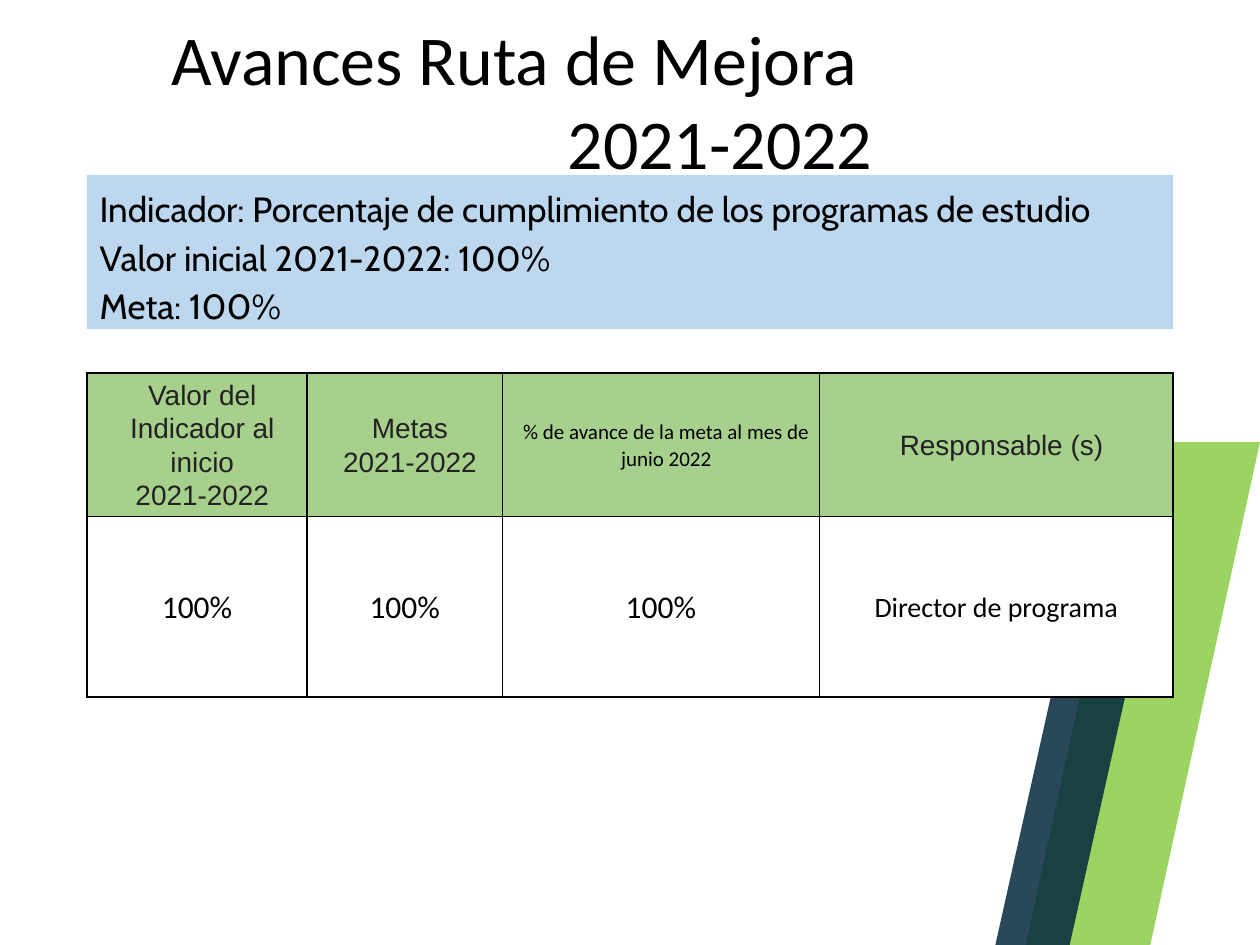
"""Build the slide on progress of the 2021-2022 improvement route."""

from dataclasses import dataclass

from lxml import etree
from pptx import Presentation
from pptx.dml.color import RGBColor
from pptx.enum.text import MSO_ANCHOR, MSO_AUTO_SIZE, PP_ALIGN
from pptx.oxml.ns import qn
from pptx.util import Pt

LEFT, CENTER, RIGHT = PP_ALIGN.LEFT, PP_ALIGN.CENTER, PP_ALIGN.RIGHT
TOP, MIDDLE = MSO_ANCHOR.TOP, MSO_ANCHOR.MIDDLE
NO_AUTOFIT = MSO_AUTO_SIZE.NONE


@dataclass(frozen=True)
class TextStyle:
    font: str
    size: float
    color: str


@dataclass(frozen=True)
class Theme:
    white: str = "FFFFFF"
    border: str = "000000"
    band: str = "BDD7EE"
    header: str = "A8D08D"
    lime: str = "92D050"
    navy: str = "00263B"
    title: TextStyle = TextStyle("Calibri", 40, "000000")
    indicator: TextStyle = TextStyle("Cabin", 20, "000000")
    heading: TextStyle = TextStyle("Arial", 16, "222222")
    small_heading: TextStyle = TextStyle("Calibri", 12, "000000")
    value: TextStyle = TextStyle("Calibri", 18, "000000")
    owner: TextStyle = TextStyle("Calibri", 16, "000000")


@dataclass(frozen=True)
class Box:
    left: float
    top: float
    width: float
    height: float


@dataclass(frozen=True)
class Stripe:
    top: float
    top_right: float
    bottom_left: float
    width: float
    color: str
    opacity: int


@dataclass(frozen=True)
class Entry:
    text: str
    style: TextStyle


THEME = Theme()
SLIDE = Box(0, 0, 720, 540)
TITLE = Box(90.72, 5.04, 511.92, 104.4)
INDICATOR = Box(49.68, 100.08, 620.64, 87.84)
TABLE = Box(49.68, 213.12, 620.64, 185.2)
COLUMN_WIDTHS = (125.8, 111.6, 181.2, 202.04)
ROW_HEIGHTS = (82.2, 103)
CELL_SPACING = 1.07
HEADER_INDENT = 6

STRIPES = (
    Stripe(252.72, 720, 586.08, 71.28, THEME.lime, 90),
    Stripe(385.2, 645.84, 568.8, 42.48, THEME.navy, 84),
)
ROWS = (
    (
        Entry("Valor del Indicador al inicio\n2021-2022", THEME.heading),
        Entry("Metas\n2021-2022", THEME.heading),
        Entry("% de avance de la meta al mes de junio 2022", THEME.small_heading),
        Entry("Responsable (s)", THEME.heading),
    ),
    (
        Entry("100%", THEME.value),
        Entry("100%", THEME.value),
        Entry("100%", THEME.value),
        Entry("Director de programa", THEME.owner),
    ),
)


def paint(fill, color: str) -> None:
    """Apply a solid colour to a fill."""
    fill.solid()
    fill.fore_color.rgb = RGBColor.from_string(color)


def write(frame, text: str, style: TextStyle, align, spacing: float, indent: float = 0) -> None:
    """Write paragraphs in one style, without bullets."""
    frame.text = text
    for paragraph in frame.paragraphs:
        properties = paragraph._p.get_or_add_pPr()
        properties.set("marL", str(Pt(indent)))
        properties.set("indent", "0")
        etree.SubElement(properties, qn("a:buNone"))
        paragraph.alignment = align
        paragraph.line_spacing = spacing
        paragraph.space_before = Pt(0)
        for run in paragraph.runs:
            run.font.name = style.font
            run.font.size = Pt(style.size)
            run.font.color.rgb = RGBColor.from_string(style.color)


def fill_placeholder(holder, box: Box, color: str, text: str, style: TextStyle, spacing: float) -> None:
    """Place, colour and write a placeholder."""
    holder.left, holder.top = Pt(box.left), Pt(box.top)
    holder.width, holder.height = Pt(box.width), Pt(box.height)
    paint(holder.fill, color)
    frame = holder.text_frame
    frame.word_wrap = True
    frame.auto_size = NO_AUTOFIT
    frame.vertical_anchor = TOP
    write(frame, text, style, LEFT, spacing)


def draw_stripe(slide, stripe: Stripe) -> None:
    """Draw a slanted translucent stripe down to the slide's bottom edge."""
    corners = (
        (stripe.top_right - stripe.width, stripe.top),
        (stripe.bottom_left, SLIDE.height),
        (stripe.bottom_left + stripe.width, SLIDE.height),
    )
    builder = slide.shapes.build_freeform(Pt(stripe.top_right), Pt(stripe.top))
    builder.add_line_segments([(Pt(x), Pt(y)) for x, y in corners], close=True)
    shape = builder.convert_to_shape()
    shape.shadow.inherit = False
    shape.line.fill.background()
    paint(shape.fill, stripe.color)
    color = shape._element.spPr.find(qn("a:solidFill")).find(qn("a:srgbClr"))
    etree.SubElement(color, qn("a:alpha"), val=str(stripe.opacity * 1000))


def draw_borders(cell) -> None:
    """Give a cell thin lines on all four sides."""
    properties = cell._tc.get_or_add_tcPr()
    for side in ("lnL", "lnR", "lnT", "lnB"):
        line = etree.SubElement(properties, qn(f"a:{side}"), w=str(Pt(1)))
        solid = etree.SubElement(line, qn("a:solidFill"))
        etree.SubElement(solid, qn("a:srgbClr"), val=THEME.border)


def draw_table(slide, box: Box) -> None:
    """Draw the table of values, goals, progress and owner."""
    frame = slide.shapes.add_table(
        len(ROWS), len(COLUMN_WIDTHS), Pt(box.left), Pt(box.top), Pt(box.width), Pt(box.height)
    )
    table = frame.table
    table.first_row = table.horz_banding = False
    for column, width in zip(table.columns, COLUMN_WIDTHS):
        column.width = Pt(width)
    for index, (row, height, entries) in enumerate(zip(table.rows, ROW_HEIGHTS, ROWS)):
        row.height = Pt(height)
        is_header = index == 0
        for cell, entry in zip(row.cells, entries):
            draw_borders(cell)
            paint(cell.fill, THEME.header if is_header else THEME.white)
            cell.vertical_anchor = MIDDLE
            cell.margin_left = cell.margin_right = Pt(5)
            cell.margin_top = cell.margin_bottom = Pt(0)
            indent = HEADER_INDENT if is_header else 0
            write(cell.text_frame, entry.text, entry.style, CENTER, CELL_SPACING, indent)


def main() -> None:
    """Build and save the slide."""
    deck = Presentation()
    deck.slide_width, deck.slide_height = Pt(SLIDE.width), Pt(SLIDE.height)
    slide = deck.slides.add_slide(deck.slide_layouts[1])
    title, indicator = slide.placeholders
    fill_placeholder(title, TITLE, THEME.white, "Avances Ruta de Mejora\n2021-2022", THEME.title, 1.0)
    title.text_frame.margin_right = Pt(104)
    title.text_frame.paragraphs[1].alignment = RIGHT
    fill_placeholder(
        indicator,
        INDICATOR,
        THEME.band,
        "Indicador: Porcentaje de cumplimiento de los programas de estudio\n"
        "Valor inicial 2021-2022: 100%\n"
        "Meta: 100%",
        THEME.indicator,
        1.15,
    )
    for stripe in STRIPES:
        draw_stripe(slide, stripe)
    draw_table(slide, TABLE)
    deck.save("out.pptx")


if __name__ == "__main__":
    main()
